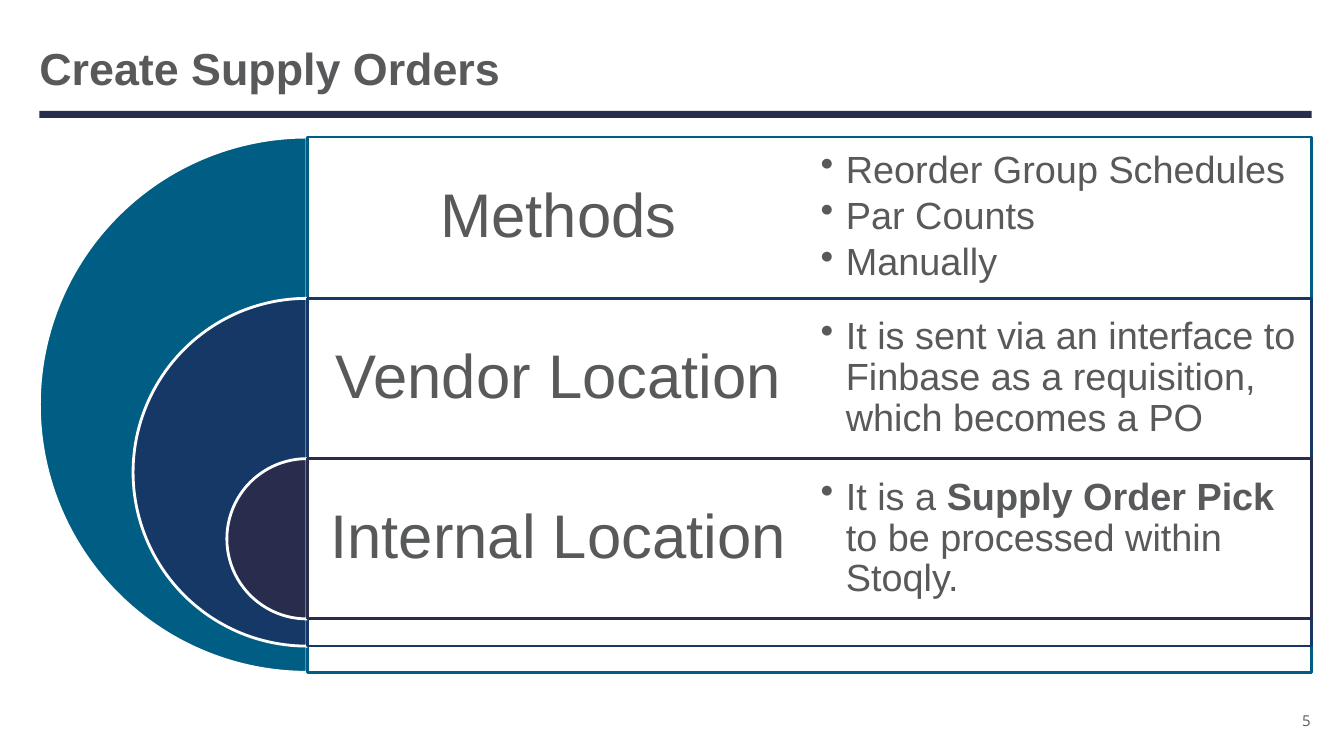
import dataclasses

import lxml.etree
import pptx
import pptx.dml.color
import pptx.enum.shapes
import pptx.enum.text
import pptx.oxml.ns
import pptx.util

EMU_PER_PX = 9144  # 100 px to the inch
NAVY, WHITE, GREY = "282D4E", "FFFFFF", "58595B"
ALIGN = pptx.enum.text.PP_ALIGN
SHAPE = pptx.enum.shapes.MSO_SHAPE

# Nested bands: every band starts one row lower and is smaller
SPINE_X, RIGHT_X, BAND_TOP = 305, 1301, 136
ROW_HEIGHT, ROW_PITCH = 159, 159.5
OUTER_DIAMETER, DIAMETER_STEP = 531, 186
COLUMN_WIDTH = (RIGHT_X - SPINE_X) // 2


@dataclasses.dataclass(frozen=True)
class Span:
    text: str
    bold: bool = False


@dataclasses.dataclass(frozen=True)
class Band:
    heading: str
    color: str
    bullets: list[list[Span]]


@dataclasses.dataclass(frozen=True)
class Style:
    size: float
    font: str = "Arial"
    align: ALIGN = ALIGN.LEFT
    line_spacing: float = 0.9
    space_after: float = 0
    inset_x: int = 0
    inset_y: int = 0
    bulleted: bool = False


TITLE = Style(32, line_spacing=0.85, inset_y=5)
HEADING = Style(44, align=ALIGN.CENTER, inset_x=18, inset_y=18)
BULLET = Style(27, space_after=4, inset_x=11, inset_y=11, bulleted=True)
NUMBER = Style(10.7, font="Open Sans", align=ALIGN.RIGHT, line_spacing=1.0)

BANDS = [
    Band("Methods", "005D83", [
        [Span("Reorder Group Schedules")], [Span("Par Counts")], [Span("Manually")],
    ]),
    Band("Vendor Location", "153867", [
        [Span("It is sent via an interface to Finbase as a requisition, which becomes a PO")],
    ]),
    Band("Internal Location", NAVY, [
        [Span("It is a "), Span("Supply Order Pick ", True),
         Span("to be processed within Stoqly.")],
    ]),
]


def px(value: int) -> pptx.util.Emu:
    return pptx.util.Emu(value * EMU_PER_PX)


def rgb(value: str) -> pptx.dml.color.RGBColor:
    return pptx.dml.color.RGBColor.from_string(value)


def apply(target, values: dict) -> None:
    for name, value in values.items():
        setattr(target, name, value)


def add_bullet(para) -> None:
    properties = para._p.get_or_add_pPr()
    properties.set("marL", str(px(25)))
    properties.set("indent", str(px(-25)))
    mark = lxml.etree.SubElement(properties, pptx.oxml.ns.qn("a:buChar"))
    mark.set("char", "•")


def add_shape(page, kind: SHAPE, left: int, top: int, width: int, height: int,
              fill: str, line: str | None = None):
    shape = page.shapes.add_shape(kind, px(left), px(top), px(width), px(height))
    shape.shadow.inherit = False
    shape.fill.solid()
    shape.fill.fore_color.rgb = rgb(fill)
    if line is None:
        shape.line.fill.background()
    else:
        shape.line.color.rgb = rgb(line)
        shape.line.width = pptx.util.Pt(2)
    return shape


def add_text(page, left: int, top: int, width: int, height: int,
             paragraphs: list[list[Span]], style: Style) -> None:
    box = page.shapes.add_textbox(px(left), px(top), px(width), px(height))
    frame = box.text_frame
    apply(frame, {
        "word_wrap": True,
        "vertical_anchor": pptx.enum.text.MSO_ANCHOR.MIDDLE,
        "margin_left": px(style.inset_x), "margin_right": px(style.inset_x),
        "margin_top": px(style.inset_y), "margin_bottom": px(style.inset_y),
    })
    for index, spans in enumerate(paragraphs):
        para = frame.add_paragraph() if index else frame.paragraphs[0]
        apply(para, {
            "alignment": style.align,
            "line_spacing": style.line_spacing,
            "space_after": pptx.util.Pt(style.space_after),
        })
        if style.bulleted:
            add_bullet(para)
        for span in spans:
            run = para.add_run()
            run.text = span.text
            apply(run.font, {
                "name": style.font, "size": pptx.util.Pt(style.size), "bold": span.bold,
            })
            run.font.color.rgb = rgb(GREY)


def add_band(page, index: int, band: Band) -> None:
    top = BAND_TOP + round(index * ROW_PITCH)
    diameter = OUTER_DIAMETER - index * DIAMETER_STEP

    # Left half of a disc, ending at the spine
    disc = add_shape(page, SHAPE.PIE, SPINE_X - (diameter + 1) // 2, top,
                     diameter, diameter, band.color, WHITE)
    disc.adjustments[0], disc.adjustments[1] = 54, 162

    # Slightly see-through panel beside it
    panel = add_shape(page, SHAPE.RECTANGLE, SPINE_X, top,
                      RIGHT_X - SPINE_X, diameter, WHITE, band.color)
    color = panel._element.spPr.find(
        f"{pptx.oxml.ns.qn('a:solidFill')}/{pptx.oxml.ns.qn('a:srgbClr')}")
    lxml.etree.SubElement(color, pptx.oxml.ns.qn("a:alpha")).set("val", "90000")

    # Heading and bullet columns
    add_text(page, SPINE_X, top, COLUMN_WIDTH, ROW_HEIGHT, [[Span(band.heading)]], HEADING)
    add_text(page, SPINE_X + COLUMN_WIDTH, top, COLUMN_WIDTH, ROW_HEIGHT,
             band.bullets, BULLET)


def main() -> None:
    deck = pptx.Presentation()
    apply(deck, {"slide_width": px(1333), "slide_height": px(750)})
    page = deck.slides.add_slide(deck.slide_layouts[6])

    # Title and rule
    add_shape(page, SHAPE.RECTANGLE, 39, 110, 1262, 7, NAVY)
    add_text(page, 39, 41, 1261, 61, [[Span("Create Supply Orders", True)]], TITLE)

    for index, band in enumerate(BANDS):
        add_band(page, index, band)

    # Page number
    add_text(page, 1250, 692, 50, 46, [[Span("5")]], NUMBER)
    deck.save("out.pptx")


if __name__ == "__main__":
    main()
